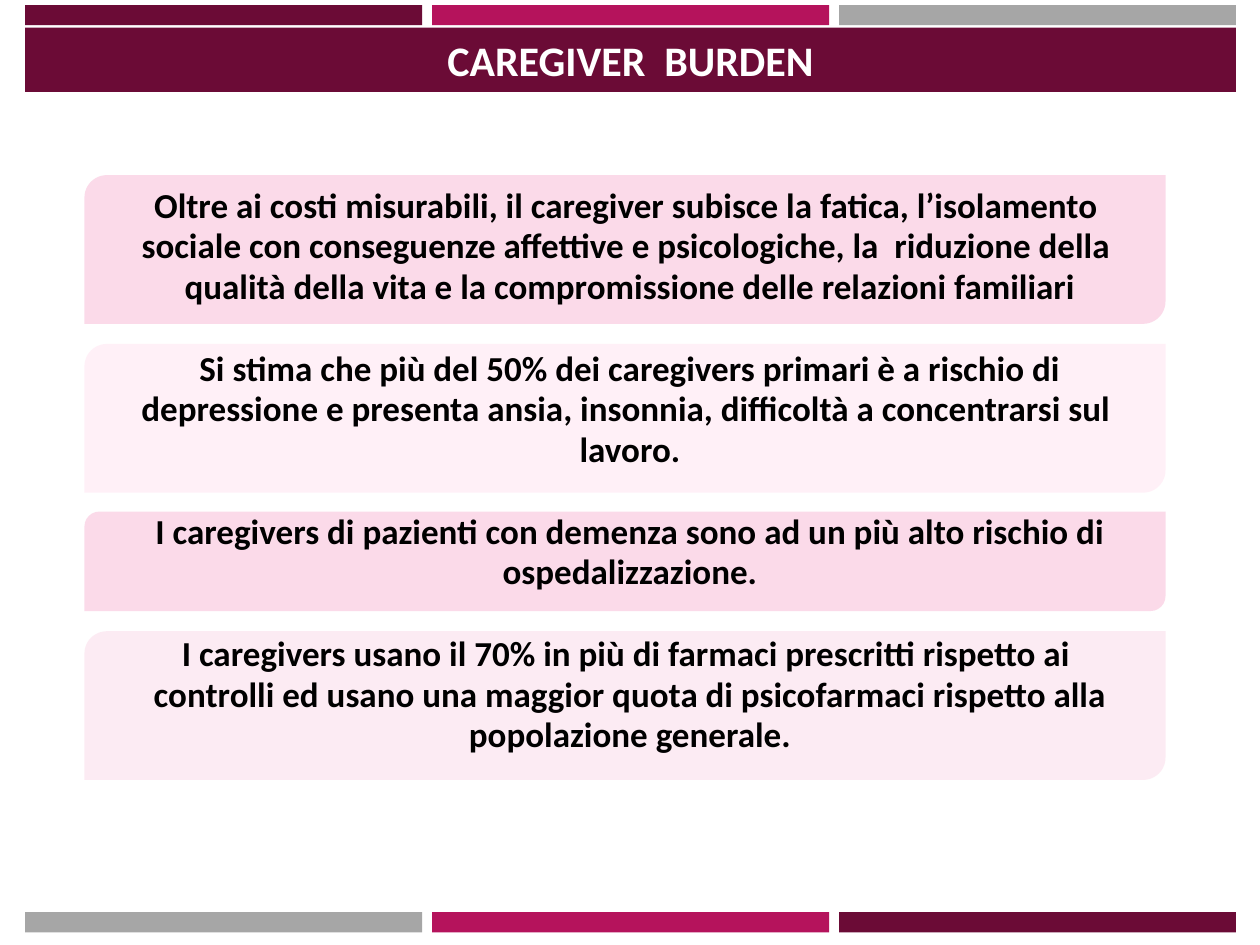
import pptx
import pptx.util
import pptx.dml.color
import pptx.enum.shapes
import pptx.enum.text
import pptx.oxml.ns
from lxml import etree

Inches = pptx.util.Inches
Pt = pptx.util.Pt
SHAPES = pptx.enum.shapes.MSO_SHAPE
CENTER = pptx.enum.text.PP_ALIGN.CENTER
PLUM, MAGENTA, GRAY = "6B0B36", "B5135C", "A6A6A6"


def color(value):
    return pptx.dml.color.RGBColor.from_string(value)


def add_filled_shape(kind, left, top, width, height, fill):
    shape = slide.shapes.add_shape(
        kind, Inches(left), Inches(top), Inches(width), Inches(height))
    shape.shadow.inherit = False
    shape.fill.solid()
    shape.fill.fore_color.rgb = color(fill)
    shape.line.fill.background()
    return shape


presentation = pptx.Presentation()
presentation.slide_width = Inches(10)
presentation.slide_height = Inches(7.5)
slide = presentation.slides.add_slide(presentation.slide_layouts[5])

# Translucent panels behind the text: top, height, fill
panels = [
    (1.39, 1.18, "F59DC5"),
    (2.73, 1.18, "FFD9EC"),
    (4.06, 0.79, "F59DC5"),
    (5.01, 1.18, "F9CBE0"),
]
for top, height, fill in panels:
    panel = add_filled_shape(
        SHAPES.ROUND_2_DIAG_RECTANGLE, 0.67, top, 8.58, height, fill)
    panel.adjustments[0] = 0.15
    fill_color = panel.fill._xPr.find(".//" + pptx.oxml.ns.qn("a:srgbClr"))
    etree.SubElement(fill_color, pptx.oxml.ns.qn("a:alpha"), val="37000")

# Three-part strips at the top and bottom, in mirrored colour order
strips = [(0.04, (PLUM, MAGENTA, GRAY)), (7.24, (GRAY, MAGENTA, PLUM))]
for top, fills in strips:
    for column, fill in enumerate(fills):
        add_filled_shape(
            SHAPES.RECTANGLE, 0.2 + column * 3.23, top, 3.15, 0.16, fill)

# Title bar
title = slide.shapes.title
title.left, title.top = Inches(0.2), Inches(0.22)
title.width, title.height = Inches(9.61), Inches(0.51)
title.fill.solid()
title.fill.fore_color.rgb = color(PLUM)
title.text_frame.text = "CAREGIVER  BURDEN"
title.text_frame.vertical_anchor = pptx.enum.text.MSO_ANCHOR.MIDDLE
paragraph = title.text_frame.paragraphs[0]
paragraph.alignment = CENTER
paragraph.font.name = "Calibri"
paragraph.font.size = Pt(24)
paragraph.font.bold = True
paragraph.font.color.rgb = color("FFFFFF")

# Statements, one group of lines per panel
statements = [
    ["Oltre ai costi misurabili, il caregiver subisce la fatica, l’isolamento ",
     "sociale con conseguenze affettive e psicologiche, la  riduzione della ",
     "qualità della vita e la compromissione delle relazioni familiari"],
    [" Si stima che più del 50% dei caregivers primari è a rischio di ",
     "depressione e presenta ansia, insonnia, difficoltà a concentrarsi sul ",
     "lavoro."],
    ["I caregivers di pazienti con demenza sono ad un più alto rischio di",
     "ospedalizzazione."],
    ["I caregivers usano il 70% in più di farmaci prescritti rispetto ai ",
     "controlli ed usano una maggior quota di psicofarmaci rispetto alla",
     "popolazione generale."],
]
text_box = slide.shapes.add_textbox(
    Inches(0.5), Inches(1.47), Inches(9), Inches(4.95))
text_frame = text_box.text_frame
text_frame.word_wrap = True
paragraph = text_frame.paragraphs[0]
for group, lines in enumerate(statements):
    for row, line in enumerate(lines):
        if group or row:
            paragraph = text_frame.add_paragraph()
        paragraph.text = line
        paragraph.alignment = CENTER
        paragraph.line_spacing = 0.8
        paragraph.space_before = Pt(27.5 if group and row == 0 else 4)
        paragraph.font.name = "Calibri"
        paragraph.font.size = Pt(20)
        paragraph.font.bold = True
        paragraph.font.color.rgb = color("000000")

presentation.save("out.pptx")
